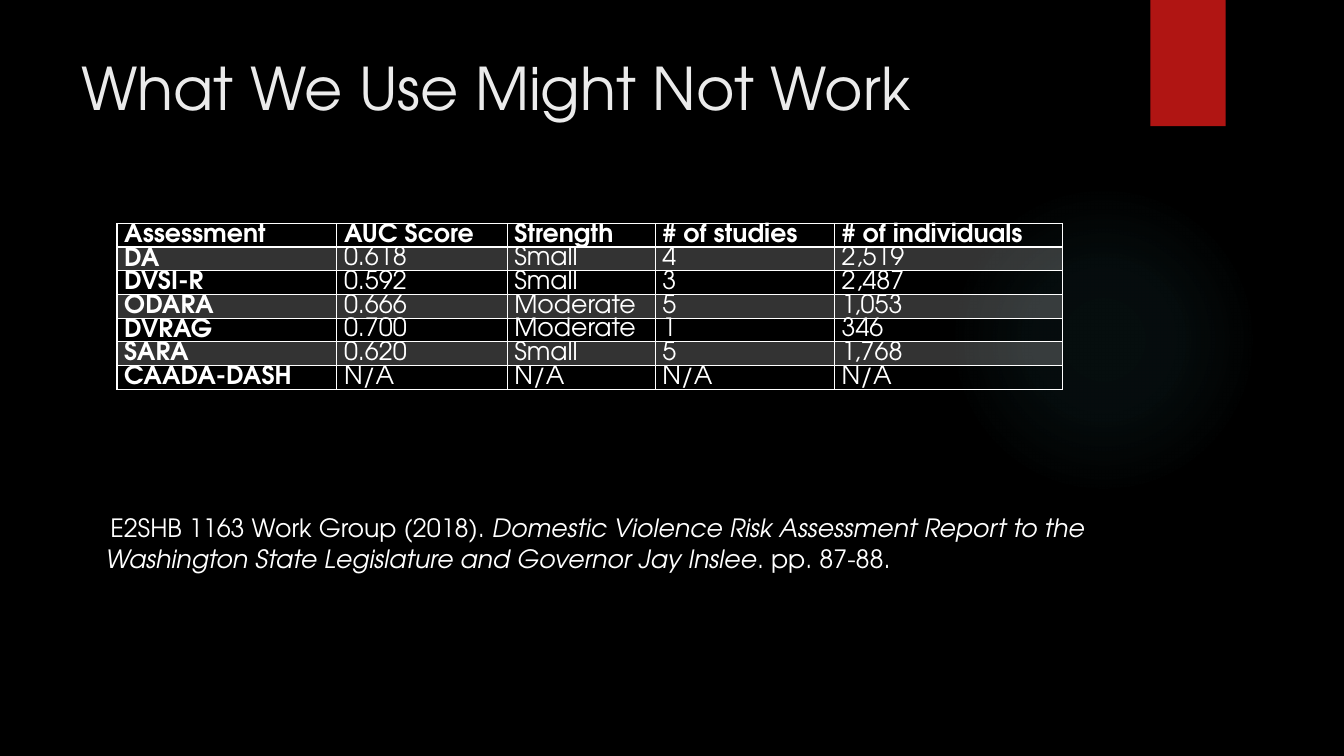
"""Build a slide on how well risk assessments predict, with a table and its citation."""
from lxml.etree import SubElement, fromstring
from pptx import Presentation
from pptx.dml.color import RGBColor
from pptx.enum.shapes import MSO_SHAPE
from pptx.enum.text import MSO_ANCHOR
from pptx.oxml.ns import nsdecls, qn
from pptx.util import Cm, Pt

TITLE = "What We Use Might Not Work"
ROWS = [
    ("Assessment", "AUC Score", "Strength", "# of studies", "# of individuals"),
    ("DA", "0.618", "Small", "4", "2,519"),
    ("DVSI-R", "0.592", "Small", "3", "2,487"),
    ("ODARA", "0.666", "Moderate", "5", "1,053"),
    ("DVRAG", "0.700", "Moderate", "1", "346"),
    ("SARA", "0.620", "Small", "5", "1,768"),
    ("CAADA-DASH", "N/A", "N/A", "N/A", "N/A"),
]
WIDTHS = (5.54, 4.29, 3.73, 4.52, 5.74)
SOURCE = [
    ("E2SHB 1163 Work Group (2018). ", False),
    ("Domestic Violence Risk Assessment Report to the Washington State "
     "Legislature and Governor Jay Inslee", True),
    (". pp. 87-88.", False),
]
THEME = {
    "font": "TeX Gyre Adventor",
    "ground": "000000", "title": "EBEBEB", "text": "FFFFFF",
    "tab": "B01513", "glow": "50B9C1",
    "head": 42, "body": 18, "pitch": 16.9, "band": 20,
    "stops": ((0, 7), (36, 6), (69, 0)),
}


def tint(fill, name):
    """Give a fill one solid theme colour."""
    fill.solid()
    fill.fore_color.rgb = RGBColor.from_string(THEME[name])


def style(run, size="body", color="text", **more):
    """Set the font of a run from theme names and further values."""
    font = run.font
    values = {"name": THEME["font"], "size": Pt(THEME[size]), **more}
    for key, value in values.items():
        setattr(font, key, value)
    font.color.rgb = RGBColor.from_string(THEME[color])


def shape(slide, kind, box):
    """Add a plain shape with neither line nor shadow."""
    item = slide.shapes.add_shape(kind, *map(Cm, box))
    item.shadow.inherit = False
    item.line.fill.background()
    return item


def glow(slide, box):
    """Add a round glow that fades outward."""
    item = shape(slide, MSO_SHAPE.OVAL, box)
    stops = "".join(
        f'<a:gs pos="{pos * 1000}"><a:srgbClr val="{THEME["glow"]}">'
        f'<a:alpha val="{alpha * 1000}"/></a:srgbClr></a:gs>'
        for pos, alpha in THEME["stops"])
    grad = fromstring(
        f'<a:gradFill {nsdecls("a")}><a:gsLst>{stops}</a:gsLst><a:path path="circle">'
        '<a:fillToRect l="50000" t="50000" r="50000" b="50000"/></a:path></a:gradFill>')
    item.fill.background()
    props = item.fill._xPr
    props.replace(props.find(qn("a:noFill")), grad)


def words(slide, box, anchor):
    """Add a wrapping text box and return its first paragraph."""
    frame = slide.shapes.add_textbox(*map(Cm, box)).text_frame
    frame.word_wrap = True
    frame.vertical_anchor = anchor
    return frame.paragraphs[0]


def border(cell, widths):
    """Draw the four sides of a cell: left, right, top and bottom."""
    props = cell._tc.get_or_add_tcPr()
    for spot, (side, width) in enumerate(zip("LRTB", widths)):
        props.insert(spot, fromstring(
            f'<a:ln{side} {nsdecls("a")} w="{Pt(width)}"><a:solidFill>'
            f'<a:srgbClr val="{THEME["text"]}"/></a:solidFill></a:ln{side}>'))


def fill_cell(cell, text, row, col):
    """Write and format one table cell."""
    values = {"margin_left": Cm(0.18), "margin_right": Cm(0.18),
              "margin_top": 0, "margin_bottom": 0}
    for key, value in values.items():
        setattr(cell, key, value)
    if row % 2:
        tint(cell.fill, "text")
        color = cell._tc.tcPr.find(".//" + qn("a:srgbClr"))
        SubElement(color, qn("a:alpha"), val=str(THEME["band"] * 1000))
    else:
        cell.fill.background()
    border(cell, (1, 1, 2 if row == 1 else 1, 1 if row else 2))
    para = cell.text_frame.paragraphs[0]
    para.line_spacing = Pt(THEME["pitch"])
    run = para.add_run()
    run.text = text
    style(run, bold=row == 0 or col == 0)


def scores(slide, left, top, high):
    """Add the table of assessment scores."""
    size = (left, top, sum(WIDTHS), high * len(ROWS))
    table = slide.shapes.add_table(len(ROWS), len(WIDTHS), *map(Cm, size)).table
    table.horz_banding = False
    for col, width in zip(table.columns, WIDTHS):
        col.width = Cm(width)
    for r, line in enumerate(ROWS):
        table.rows[r].height = Cm(high)
        for c, text in enumerate(line):
            fill_cell(table.cell(r, c), text, r, c)


def main():
    """Put the slide together and save it."""
    deck = Presentation()
    deck.slide_width, deck.slide_height = Cm(33.87), Cm(19.05)
    slide = deck.slides.add_slide(deck.slide_layouts[6])
    tint(slide.background.fill, "ground")

    glow(slide, (23.9, 4.65, 7.82, 7.82))
    tab = shape(slide, MSO_SHAPE.RECTANGLE, (28.99, 0, 1.9, 3.18))
    tint(tab.fill, "tab")

    head = words(slide, (1.8, 1.19, 26.14, 3.89), MSO_ANCHOR.TOP).add_run()
    head.text = TITLE
    style(head, "head", "title")

    scores(slide, 2.95, 5.63, 0.59)

    cite = words(slide, (2.41, 12.78, 28.32, 1.8), MSO_ANCHOR.MIDDLE)
    cite._p.get_or_add_pPr().set("indent", str(Cm(0.12)))
    for text, slant in SOURCE:
        run = cite.add_run()
        run.text = text
        style(run, italic=slant)
    deck.save("out.pptx")


if __name__ == "__main__":
    main()
